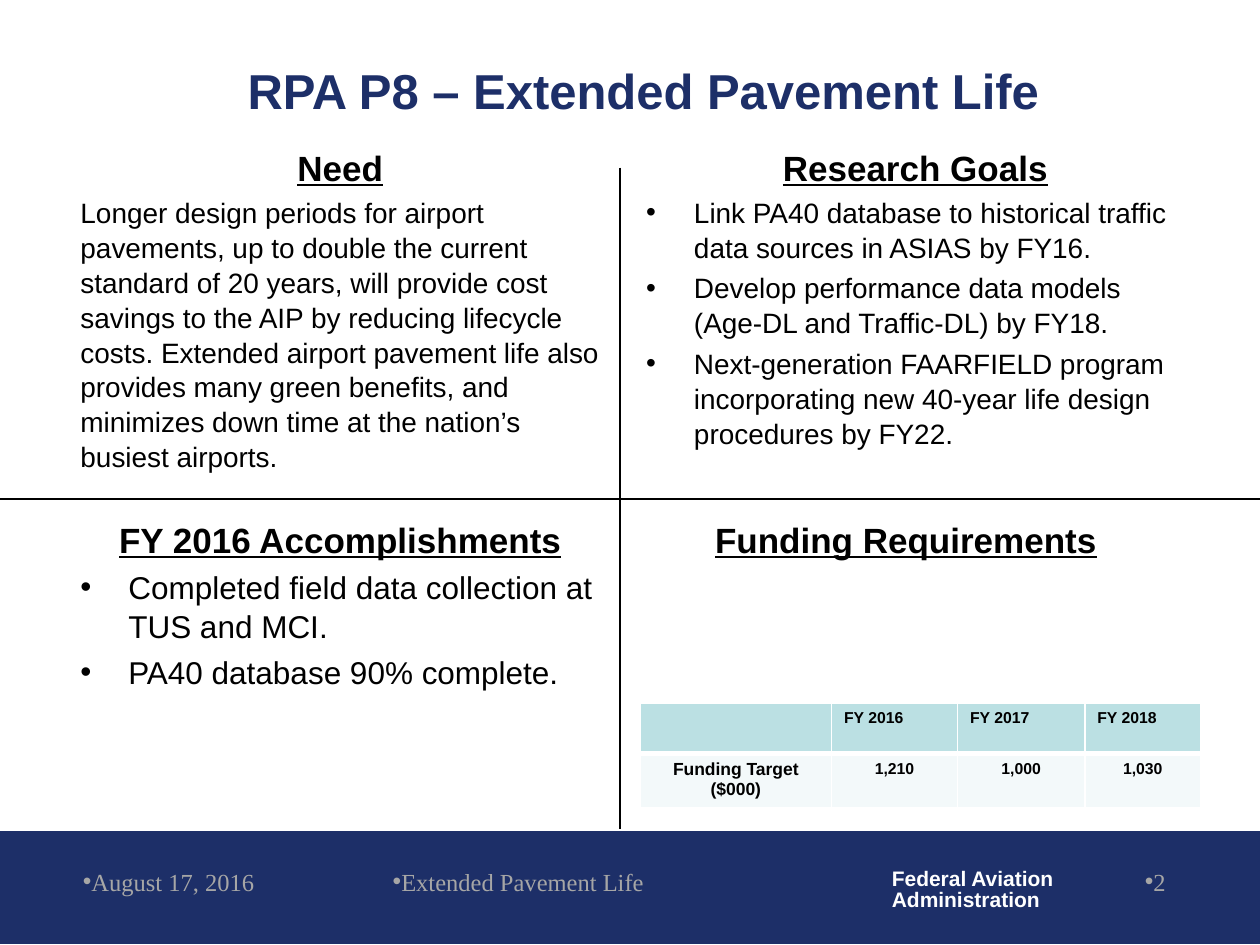
from pptx import Presentation
from pptx.dml.color import RGBColor as RGB
from pptx.enum.shapes import MSO_CONNECTOR as Conn, MSO_SHAPE as Shape
from pptx.enum.text import MSO_ANCHOR as Anchor, PP_ALIGN as Align
from pptx.oxml import parse_xml
from pptx.oxml.ns import nsdecls
from pptx.util import Inches, Pt

HUES = {"navy": "1D2F68", "black": "000000", "white": "FFFFFF",
        "gray": "A6A6A6", "teal": "BBE0E3", "pale": "F3F9FA"}
SANS, SERIF = "Arial", "Times New Roman"


def hue(name):
    return RGB.from_string(HUES[name])


class Deck:
    def __init__(self, wide, high):
        self.prs = Presentation()
        self.prs.slide_width, self.prs.slide_height = Inches(wide), Inches(high)
        self.slide = self.prs.slides.add_slide(self.prs.slide_layouts[5])
        self.shapes = self.slide.shapes

    def run(self, para, text, size, color="black", font=SANS, bold=False, under=False):
        run = para.add_run()
        run.text = text
        face = run.font
        face.size, face.name, face.bold, face.underline = Pt(size), font, bold, under
        face.color.rgb = hue(color)

    def bullet(self, para, left=0.0):
        props = para._p.get_or_add_pPr()
        props.set("marL", str(Inches(left)))
        props.set("indent", str(-Inches(left)))
        props.append(parse_xml(f'<a:buFont {nsdecls("a")} typeface="Arial"/>'))
        props.append(parse_xml(f'<a:buChar {nsdecls("a")} char="•"/>'))

    def title(self, text, *box):
        head = self.shapes.title
        head.left, head.top, head.width, head.height = map(Inches, box)
        frame = head.text_frame
        frame.vertical_anchor, frame.word_wrap = Anchor.MIDDLE, True
        para = frame.paragraphs[0]
        para.alignment = Align.CENTER
        self.run(para, text, 28, "navy", bold=True)

    def box(self, *box, wrap=True):
        frame = self.shapes.add_textbox(*map(Inches, box)).text_frame
        frame.word_wrap = wrap
        return frame

    def panel(self, head, lines, size, marks, *box):
        frame = self.box(*box)
        para = frame.paragraphs[0]
        para.alignment, para.line_spacing = Align.CENTER, 1.04
        self.run(para, head, 20, bold=True, under=True)
        for line in lines:
            para = frame.add_paragraph()
            para.line_spacing, para.space_before = 1.04, Pt(size * 0.2)
            if marks:
                self.bullet(para, 0.38)
            self.run(para, line, size)

    def note(self, text, align, left, width):
        para = self.box(left, 6.83, width, 0.5).paragraphs[0]
        para.alignment = align
        self.bullet(para)
        self.run(para, text, 14, "gray", SERIF)

    def band(self, color, *box):
        rect = self.shapes.add_shape(Shape.RECTANGLE, *map(Inches, box))
        rect.shadow.inherit = False
        rect.fill.solid()
        rect.fill.fore_color.rgb = rect.line.color.rgb = hue(color)
        rect.line.width = Pt(0.75)

    def line(self, *ends):
        line = self.shapes.add_connector(Conn.STRAIGHT, *map(Inches, ends))
        line.line.color.rgb, line.line.width = hue("black"), Pt(0.75)
        line._element.spPr.append(parse_xml(f'<a:effectLst {nsdecls("a")}/>'))

    def edges(self, cell, base):
        props = cell._tc.get_or_add_tcPr()
        sides = {"lnL": 1, "lnR": 1, "lnT": 1, "lnB": base}
        for spot, (tag, width) in enumerate(sides.items()):
            props.insert(spot, parse_xml(
                f'<a:{tag} {nsdecls("a")} w="{Pt(width)}"><a:solidFill>'
                f'<a:srgbClr val="{HUES["white"]}"/></a:solidFill></a:{tag}>'))

    def table(self, rows, cols, highs, left, top):
        grid = self.shapes.add_table(len(rows), len(cols), Inches(left), Inches(top),
                                     Inches(sum(cols)), Inches(sum(highs))).table
        for col, width in zip(grid.columns, cols):
            col.width = Inches(width)
        for r, row in enumerate(rows):
            grid.rows[r].height = Inches(highs[r])
            for c, text in enumerate(row):
                cell = grid.cell(r, c)
                cell.fill.solid()
                cell.fill.fore_color.rgb = hue("pale" if r else "teal")
                self.edges(cell, 1 if r else 3)
                if text:
                    para = cell.text_frame.paragraphs[0]
                    para.alignment = Align.CENTER if r else Align.LEFT
                    self.run(para, text, 9 if c else 10, bold=True)


def main():
    deck = Deck(10, 7.5)

    # Footer band and agency name
    deck.band("navy", 0, 6.6, 10, 0.89)
    name = deck.box(6.98, 6.85, 1.5, 0.44, wrap=False)
    for para, text in zip((name.paragraphs[0], name.add_paragraph()),
                          ("Federal Aviation", "Administration")):
        para.line_spacing = 0.85
        deck.run(para, text, 12, "white", bold=True)

    deck.title("RPA P8 – Extended Pavement Life", 0.47, 0.38, 9.27, 0.67)

    # Four panels
    left, right, upper, lower = 0.54, 5.03, 1.1, 4.05
    deck.panel("Need", [
        "Longer design periods for airport pavements, up to double the current "
        "standard of 20 years, will provide cost savings to the AIP by reducing "
        "lifecycle costs. Extended airport pavement life also provides many green "
        "benefits, and minimizes down time at the nation’s busiest airports."],
        16, False, left, upper, 4.32, 2.9)
    deck.panel("Research Goals", [
        "Link PA40 database to historical traffic data sources in ASIAS by FY16.",
        "Develop performance data models (Age-DL and Traffic-DL) by FY18.",
        "Next-generation FAARFIELD program incorporating new 40-year life design "
        "procedures by FY22."], 16, True, right, upper, 4.47, 2.9)
    deck.panel("FY 2016 Accomplishments", [
        "Completed field data collection at TUS and MCI.",
        "PA40 database 90% complete."], 18, True, left, lower, 4.32, 2.33)
    deck.panel("Funding Requirements", [], 18, False, right, lower, 4.32, 2.33)

    # Dividers
    deck.line(4.92, 1.33, 4.92, 6.58)
    deck.line(0, 3.96, 10, 3.96)

    # Funding table
    deck.table([["", "FY 2016", "FY 2017", "FY 2018"],
                ["Funding Target ($000)", "1,210", "1,000", "1,030"]],
               [1.52, 1, 1.01, 0.92], [0.4, 0.43], 5.08, 5.58)

    # Footer notes
    deck.note("August 17, 2016", Align.LEFT, 0.56, 1.9)
    deck.note("Extended Pavement Life", Align.CENTER, 2.53, 3.17)
    deck.note("2", Align.RIGHT, 7.27, 2.08)

    deck.prs.save("out.pptx")


if __name__ == "__main__":
    main()
